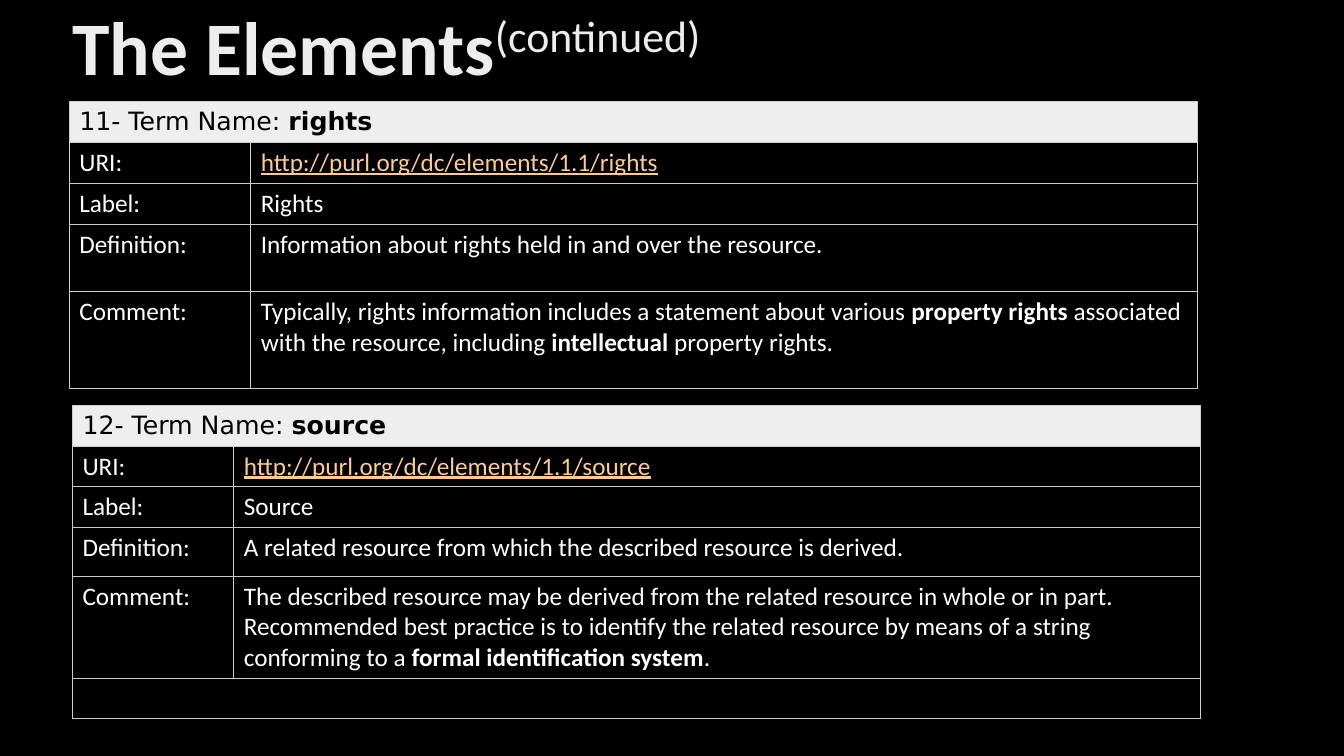
from lxml.etree import SubElement
from pptx import Presentation
from pptx.dml.color import RGBColor
from pptx.enum.text import MSO_ANCHOR
from pptx.oxml.ns import qn
from pptx.util import Pt

HEAD = {"size": Pt(18), "name": "DejaVu Sans", "color": "000000", "bold": False}
BODY = {"size": Pt(18), "name": "Calibri", "color": "FFFFFF", "bold": False}
LINK = {**BODY, "color": "FBCA98", "underline": True}
TITLE = {"size": Pt(54), "name": "Calibri", "color": "EDEDED", "bold": True}
BOLD = {"bold": True}
LABELS = ["URI:", "Label:", "Definition:", "Comment:"]

TERMS = [
    {
        "name": ("11- Term Name: ", "rights"),
        "left": 49.5, "top": 72.75,
        "cols": [129.6, 676.1],
        "rows": [28, 29.25, 29.25, 48.5, 69],
        "facts": [
            ["http://purl.org/dc/elements/1.1/rights"],
            ["Rights"],
            ["Information about rights held in and over the resource."],
            ["Typically, rights information includes a statement about various ",
             "property rights ", "associated with the resource, including ",
             "intellectual", " property rights."],
        ],
    },
    {
        "name": ("12- Term Name: ", "source"),
        "left": 51.75, "top": 289.75,
        "cols": [115.2, 690.3],
        "rows": [28.25, 29.25, 29.25, 34.5, 73, 28.5],
        "facts": [
            ["http://purl.org/dc/elements/1.1/source"],
            ["Source"],
            ["A related resource from which the described resource is derived."],
            ["The described resource may be derived from the related resource "
             "in whole or in part. Recommended best practice is to identify the "
             "related resource by means of a string conforming to a ",
             "formal identification system", "."],
        ],
    },
]


def paint(fill, color):
    fill.solid()
    fill.fore_color.rgb = RGBColor.from_string(color)


def write(para, text, style):
    run = para.add_run()
    run.text = text
    for key, value in style.items():
        if key == "color":
            paint(run.font.fill, value)
        else:
            setattr(run.font, key, value)
    return run


def write_mix(cell, texts, style):
    para = cell.text_frame.paragraphs[0]
    for i, text in enumerate(texts):
        write(para, text, {**style, **BOLD} if i % 2 else style)


def frame(cell):
    props = cell._tc.get_or_add_tcPr()
    for side in ("lnL", "lnR", "lnT", "lnB"):
        line = SubElement(props, qn("a:" + side), w=str(Pt(0.75)))
        fill = SubElement(line, qn("a:solidFill"))
        SubElement(fill, qn("a:srgbClr"), val="CCCCCC")
    cell.fill.background()


def add_term(slide, term):
    cols, rows = term["cols"], term["rows"]
    table = slide.shapes.add_table(
        len(rows), len(cols), Pt(term["left"]), Pt(term["top"]),
        Pt(sum(cols)), Pt(sum(rows))).table
    table.first_row = table.horz_banding = False
    for col, width in zip(table.columns, cols):
        col.width = Pt(width)
    for row, height in zip(table.rows, rows):
        row.height = Pt(height)
    for cell in table.iter_cells():
        frame(cell)
    for r in range(len(rows)):
        if not 1 <= r <= len(LABELS):
            table.cell(r, 0).merge(table.cell(r, 1))
    paint(table.cell(0, 0).fill, "EEEEEE")
    write_mix(table.cell(0, 0), term["name"], HEAD)
    for r, (label, fact) in enumerate(zip(LABELS, term["facts"]), 1):
        write_mix(table.cell(r, 0), [label], BODY)
        write_mix(table.cell(r, 1), fact, LINK if r == 1 else BODY)


def main():
    deck = Presentation()
    deck.slide_width, deck.slide_height = Pt(960), Pt(540)
    slide = deck.slides.add_slide(deck.slide_layouts[6])
    paint(slide.background.fill, "000000")

    box = slide.shapes.add_textbox(Pt(44.64), Pt(0), Pt(828), Pt(72.75))
    text = box.text_frame
    text.word_wrap = True
    text.vertical_anchor = MSO_ANCHOR.MIDDLE
    para = text.paragraphs[0]
    para.line_spacing = 0.9
    write(para, "The Elements", TITLE)
    more = write(para, "(continued)", {**TITLE, "bold": False})
    more.font._element.set("baseline", "30000")

    for term in TERMS:
        add_term(slide, term)
    deck.save("out.pptx")


if __name__ == "__main__":
    main()
